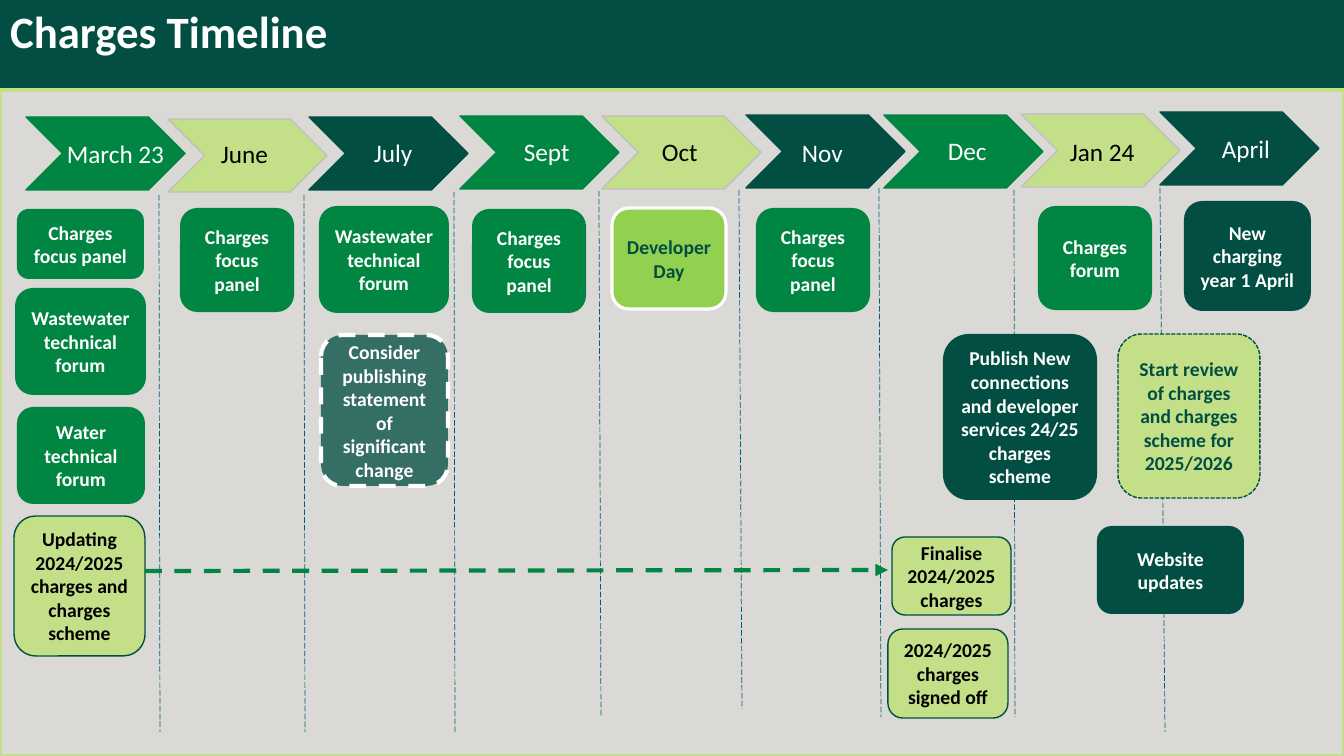
from dataclasses import dataclass
from itertools import cycle

from lxml.etree import SubElement as add_node
from pptx import Presentation
from pptx.dml.color import RGBColor as Rgb
from pptx.enum.dml import MSO_LINE as Dash
from pptx.enum.shapes import MSO_CONNECTOR as Link, MSO_SHAPE as Form
from pptx.enum.text import MSO_ANCHOR as Anchor, MSO_AUTO_SIZE as Fit, PP_ALIGN as Align
from pptx.oxml.ns import qn
from pptx.util import Emu, Pt

SCALE = 914400 / 100.8


@dataclass(frozen=True)
class Theme:
    teal: str = "024E43"
    green: str = "008542"
    lime: str = "C3E088"
    leaf: str = "92D050"
    stone: str = "DBD9D6"
    grey: str = "BFBFBF"
    blue: str = "005E7D"
    white: str = "FFFFFF"
    black: str = "000000"
    font: str = "Calibri"
    title: int = 32
    month: int = 18
    card: int = 14


T = Theme()

STYLES = {
    "green": dict(fill=T.green, ink=T.white),
    "teal": dict(fill=T.teal, ink=T.white),
    "lime": dict(fill=T.lime, ink=T.black, edge=(T.teal, 1, None)),
    "event": dict(fill=T.leaf, ink=T.teal, edge=(T.white, 2.25, None), inset=0),
    "maybe": dict(fill=T.teal, ink=T.white, edge=(T.white, 3, Dash.DASH), alpha=77),
    "review": dict(fill=T.lime, ink=T.teal, edge=(T.teal, 1, Dash.SQUARE_DOT)),
}

MONTHS = [
    ("March 23", (26, 117), (57, 133, 125)),
    ("June", (168, 119), (211, 133, 86)),
    ("July", (309, 117), (364, 132, 64)),
    ("Sept", (460, 116), (514, 131, 103)),
    ("Oct", (602, 116), (652, 131, 86)),
    ("Nov", (746, 115), (792, 132, 86)),
    ("Dec", (884, 115), (938, 130, 86)),
    ("Jan 24", (1021, 114), (1060, 131, 118)),
    ("April", (1160, 112), (1212, 128, 120)),
]

RULES = [
    (159, 195, 160, 732),
    (304, 195, 305, 732),
    (454, 192, 455, 732),
    (599, 191, 601, 717),
    (739, 190, 742, 709),
    (879, 188, 881, 717),
    (1014, 190, 1015, 717),
    (1160, 188, 1165, 732),
]

CARDS = [
    ("green", (17, 209, 127, 70), "Charges focus panel"),
    ("green", (15, 288, 131, 107), "Wastewater technical forum"),
    ("green", (17, 407, 128, 97), "Water technical forum"),
    ("lime", (14, 516, 131, 140), "Updating 2024/2025 charges and charges scheme"),
    ("green", (180, 208, 114, 104), "Charges focus panel"),
    ("green", (319, 206, 130, 107), "Wastewater technical forum"),
    ("maybe", (321, 335, 127, 151), "Consider publishing statement of significant change"),
    ("green", (472, 209, 114, 104), "Charges focus panel"),
    ("event", (612, 208, 114, 101), "Developer Day"),
    ("green", (756, 208, 114, 104), "Charges focus panel"),
    ("teal", (943, 334, 154, 166),
     "Publish New connections and developer services 24/25 charges scheme"),
    ("lime", (892, 537, 119, 78), "Finalise 2024/2025 charges"),
    ("lime", (888, 629, 120, 89), "2024/2025\vcharges signed off"),
    ("green", (1038, 206, 114, 104), "Charges forum"),
    ("teal", (1184, 201, 127, 110), "New charging year 1 April"),
    ("review", (1118, 334, 142, 164),
     "Start review of charges and charges scheme for\n2025/2026"),
    ("teal", (1097, 526, 147, 88), "Website updates"),
]


def px(*sizes):
    return [Emu(round(size * SCALE)) for size in sizes]


def put(item, **values):
    for name, value in values.items():
        setattr(item, name, value)


def paint(shape, tint):
    shape.fill.solid()
    shape.fill.fore_color.rgb = Rgb.from_string(tint)


def stroke(line, tint, width, dash=None):
    line.color.rgb = Rgb.from_string(tint)
    put(line, width=Pt(width), dash_style=dash)


def write(shape, text, size, ink, bold=False, align=Align.LEFT, **frame):
    body = shape.text_frame
    body.text = text
    put(body, word_wrap=True, **frame)
    for para in body.paragraphs:
        para.alignment = align
        for run in para.runs:
            put(run.font, name=T.font, size=Pt(size), bold=bold)
            run.font.color.rgb = Rgb.from_string(ink)


def add_form(slide, form, box, fill, edge=None):
    shape = slide.shapes.add_shape(form, *px(*box))
    shape.shadow.inherit = False
    paint(shape, fill)
    if edge:
        stroke(shape.line, *edge)
    else:
        shape.line.fill.background()
    return shape


def add_card(slide, box, text, fill, ink, edge=None, alpha=None, inset=None):
    card = add_form(slide, Form.ROUNDED_RECTANGLE, box, fill, edge)
    write(card, text, T.card, ink, True, Align.CENTER, vertical_anchor=Anchor.MIDDLE)
    if alpha is not None:
        tint = card._element.spPr.find(".//" + qn("a:srgbClr"))
        add_node(tint, qn("a:alpha"), val=str(alpha * 1000))
    if inset is not None:
        put(card.text_frame, margin_left=inset, margin_right=inset)


def add_month(slide, text, spot, label, fill, edge, ink):
    add_form(slide, Form.CHEVRON, (*spot, 159, 73), fill, (edge, 1))
    box = slide.shapes.add_textbox(*px(*label, 40))
    write(box, text, T.month, ink, auto_size=Fit.SHAPE_TO_FIT_TEXT)


def add_line(slide, ends, tint, width, dash, arrow=False):
    line = slide.shapes.add_connector(Link.STRAIGHT, *px(*ends))
    stroke(line.line, tint, width, dash)
    props = line._element.spPr
    if arrow:
        add_node(props.find(qn("a:ln")), qn("a:tailEnd"), type="triangle")
    add_node(props, qn("a:effectLst"))


def add_title(slide, text):
    title = slide.shapes.title
    left, top, width, height = px(0, -1, 1344, 64)
    put(title, left=left, top=top, width=width, height=height)
    paint(title, T.teal)
    write(title, text, T.title, T.white, True,
          vertical_anchor=Anchor.TOP, auto_size=Fit.SHAPE_TO_FIT_TEXT)


def main():
    deck = Presentation()
    wide, high = px(1344, 756)
    put(deck, slide_width=wide, slide_height=high)
    slide = deck.slides.add_slide(deck.slide_layouts[5])
    paint(slide.background, T.teal)
    add_title(slide, "Charges Timeline")
    add_form(slide, Form.RECTANGLE, (0, 90, 1344, 666), T.stone, (T.lime, 3))
    looks = cycle([
        (T.green, T.green, T.white),
        (T.lime, T.grey, T.black),
        (T.teal, T.teal, T.white),
    ])
    for month, look in zip(MONTHS, looks):
        add_month(slide, *month, *look)
    for ends in RULES:
        add_line(slide, ends, T.blue, 0.5, Dash.LONG_DASH)
    for style, box, text in CARDS:
        add_card(slide, box, text, **STYLES[style])
    add_line(slide, (145, 571, 888, 570), T.green, 3, Dash.DASH, arrow=True)
    deck.save("out.pptx")


if __name__ == "__main__":
    main()
